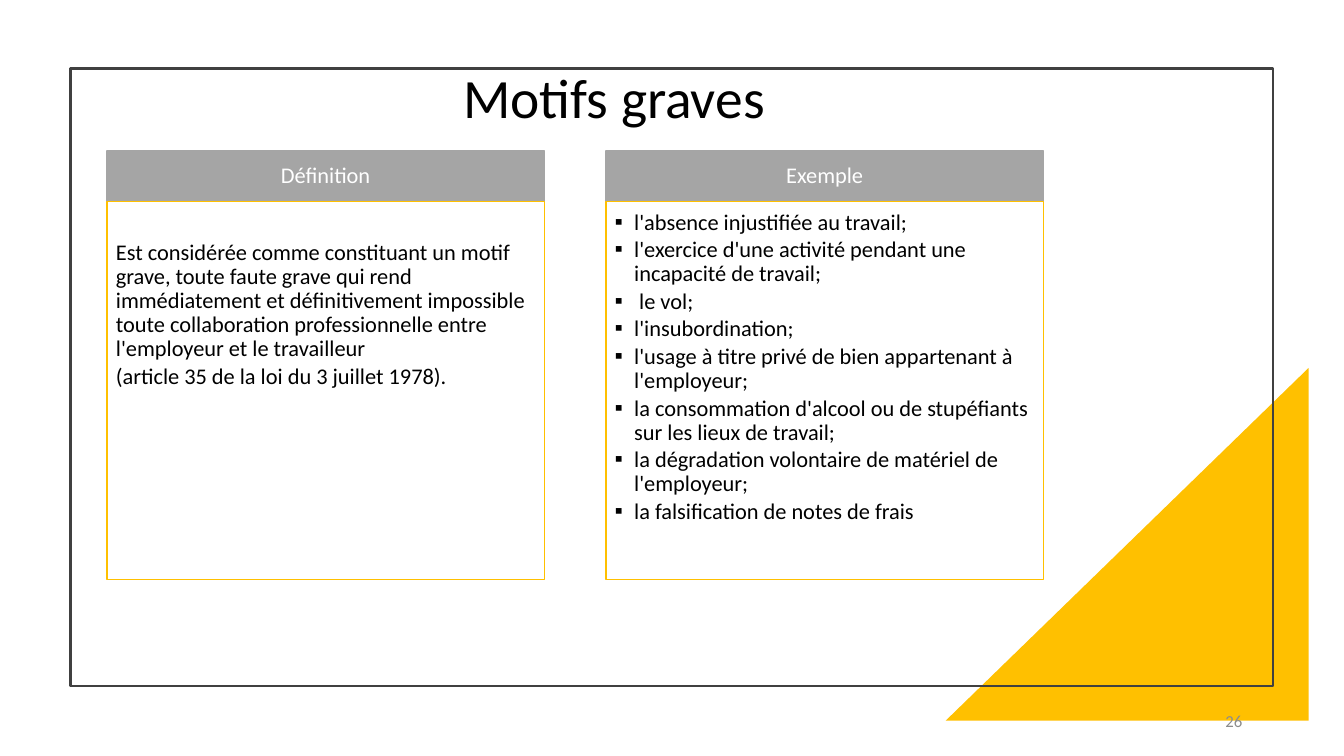
"""Builds the slide "Motifs graves": a definition and its examples side by side."""
from pptx import Presentation
from pptx.dml.color import RGBColor
from pptx.enum.shapes import MSO_SHAPE as Shape
from pptx.enum.text import MSO_ANCHOR as Anchor, PP_ALIGN as Align
from pptx.oxml.ns import qn
from pptx.util import Inches, Pt
from lxml.etree import SubElement


def add_box(kind, box, fill=None, line=None, width=1):
    shape = slide.shapes.add_shape(kind, *map(Inches, box))
    shape.shadow.inherit = False
    for paint, color in ((shape.fill, fill), (shape.line.fill, line)):
        if color:
            paint.solid()
            paint.fore_color.rgb = RGBColor.from_string(color)
        else:
            paint.background()
    if line:
        shape.line.width = Pt(width)
    return shape


def write(shape, lines, size, color, align, anchor, margins, spacing=0.9, after=0):
    frame = shape.text_frame
    frame.word_wrap = True
    frame.vertical_anchor = anchor
    frame.margin_left, frame.margin_top, frame.margin_right, frame.margin_bottom = map(Inches, margins)
    frame.text = "\n".join(lines)
    for paragraph in frame.paragraphs:
        paragraph.alignment = align
        paragraph.line_spacing = spacing
        paragraph.space_after = Pt(after)
        for run in paragraph.runs:
            run.font.name = "Calibri"
            run.font.size = Pt(size)
            run.font.color.rgb = RGBColor.from_string(color)


presentation = Presentation()
presentation.slide_width = Inches(13.33)
presentation.slide_height = Inches(7.5)
slide = presentation.slides.add_slide(presentation.slide_layouts[6])

triangle = add_box(Shape.RIGHT_TRIANGLE, (9.38, 3.65, 3.6, 3.5), "FFC000")
triangle.element.spPr.xfrm.set("flipH", "1")
add_box(Shape.RECTANGLE, (0.7, 0.68, 11.93, 6.13), line="404040", width=1.5)

title = slide.shapes.add_textbox(*map(Inches, (0.7, 0.68, 10.78, 0.64)))
write(title, ["Motifs graves"], 39.6, "000000", Align.CENTER, Anchor.MIDDLE, (0.1, 0.05, 0.1, 0.05))

definition = [
    "Est considérée comme constituant un motif grave, toute faute grave qui rend "
    "immédiatement et définitivement impossible toute collaboration professionnelle "
    "entre l'employeur et le travailleur",
    "(article 35 de la loi du 3 juillet 1978).",
]
examples = [
    "l'absence injustifiée au travail;",
    "l'exercice d'une activité pendant une incapacité de travail;",
    " le vol;",
    "l'insubordination;",
    "l'usage à titre privé de bien appartenant à l'employeur;",
    "la consommation d'alcool ou de stupéfiants sur les lieux de travail;",
    "la dégradation volontaire de matériel de l'employeur;",
    "la falsification de notes de frais",
]
columns = [
    (1.06, "Définition", definition, 0.39, False),
    (6.01, "Exemple", examples, 0.09, True),
]
for left, heading, lines, top_margin, bulleted in columns:
    header = add_box(Shape.RECTANGLE, (left, 1.5, 4.34, 0.5), "A5A5A5", "A5A5A5")
    write(header, [heading], 16, "FFFFFF", Align.CENTER, Anchor.MIDDLE, (0.12, 0.07, 0.12, 0.07))
    body = add_box(Shape.RECTANGLE, (left, 2, 4.34, 3.75), "FFFFFF", "FFC000")
    write(body, lines, 16, "000000", Align.LEFT, Anchor.TOP, (0.09, top_margin, 0.12, 0.14), after=2.4)
    if bulleted:
        for paragraph in body.text_frame.paragraphs:
            properties = paragraph._p.get_or_add_pPr()
            properties.set("marL", str(Inches(0.19)))
            properties.set("indent", str(Inches(-0.19)))
            SubElement(properties, qn("a:buFont"), typeface="Calibri")
            SubElement(properties, qn("a:buChar"), char="▪")

page_number = slide.shapes.add_textbox(*map(Inches, (9.42, 6.95, 3, 0.4)))
write(page_number, ["26"], 12, "8C8C8C", Align.RIGHT, Anchor.MIDDLE, (0.1, 0.05, 0.1, 0.05), spacing=1.0)

presentation.save("out.pptx")
